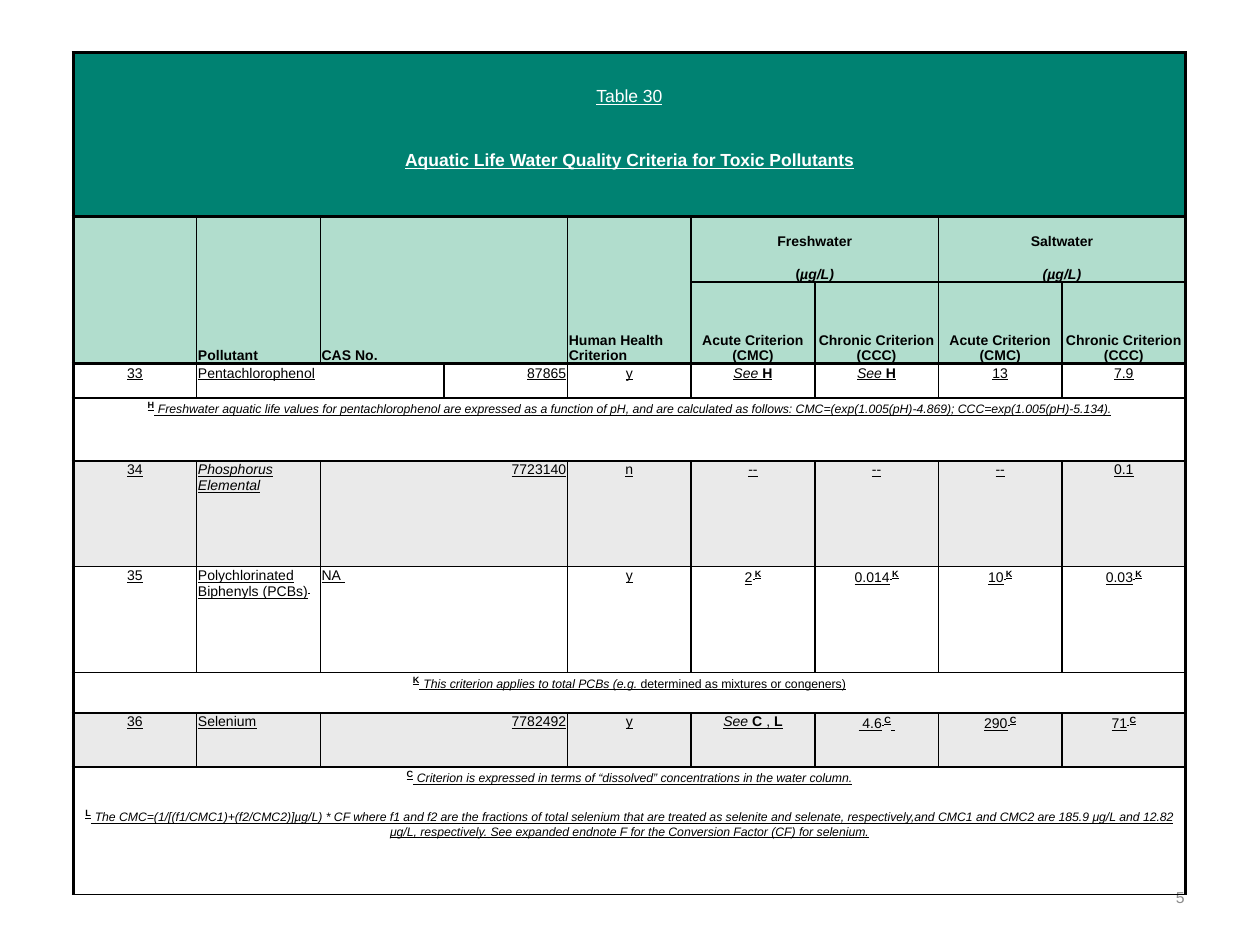
from dataclasses import dataclass

from lxml.etree import SubElement
from pptx import Presentation
from pptx.dml.color import RGBColor
from pptx.enum.text import MSO_ANCHOR, PP_ALIGN
from pptx.oxml.ns import qn
from pptx.util import Inches, Pt


@dataclass(frozen=True)
class Theme:
    font: str = "Arial"
    black: str = "000000"
    white: str = "FFFFFF"
    title_fill: str = "008272"
    header_fill: str = "B1DDCD"
    band_fill: str = "EAEAEA"
    page_number: str = "8C8C8C"
    title_size: float = 10
    body_size: float = 8
    mark_size: float = 9
    note_size: float = 7
    no_grid_style: str = "{2D5ABB26-0587-4C30-8999-92F81FD0307C}"


THEME = Theme()
LEFT, CENTER, RIGHT = PP_ALIGN.LEFT, PP_ALIGN.CENTER, PP_ALIGN.RIGHT

COLUMN_COUNT = 9
ROW_HEIGHTS = [0.26, 0.27, 0.24, 0.27, 0.26, 0.26, 0.26, 0.65,
               0.27, 0.5, 0.84, 0.84, 0.32, 0.43, 0.31, 0.7]
HEADER_ROW, FIRST_DATA_ROW = 5, 8
OPEN_EDGES = {1, 2, 3, 4, 6, 15}
HEAVY_EDGES = {0: 2, HEADER_ROW: 1.5, FIRST_DATA_ROW: 2}


def marked(value, letter, tail=""):
    """Runs for a value followed by a superscript note letter."""
    runs = [(value, ""), (" ", "b^"), (letter, "b^m")]
    return runs + [(tail, "")] if tail else runs


def note(letter, *runs):
    return [(letter, "b^m"), (" ", "is"), *runs]


SEE_H = [("See", "i"), (" H", "b")]
# Row: number, pollutant, CAS number, health criterion, then the four criteria
POLLUTANTS = {
    8: ["33", "Pentachlorophenol", "87865", "y", SEE_H, SEE_H, "13", "7.9"],
    10: ["34", [("Phosphorus Elemental", "i")], "7723140", "n", "--", "--", "--", "0.1"],
    11: ["35", [("Polychlorinated Biphenyls (PCBs)", ""), (" ", "i^")], "NA\u00a0", "y",
         marked("2", "K"), marked("0.014", "K"), marked("10", "K"), marked("0.03", "K")],
    13: ["36", "Selenium", "7782492", "y",
         [("See", "i"), (" ", ""), ("C", "b"), (" , ", ""), ("L", "b")],
         marked(" 4.6", "C", " "), marked("290", "C"), marked("71", "C")],
}
NOTES = {
    9: note("H", ("Freshwater aquatic life values for pentachlorophenol are expressed as a "
                  "function of pH, and are calculated as follows: CMC=(exp(1.005(pH)-4.869); "
                  "CCC=exp(1.005(pH)-5.134).", "i")),
    12: [("K", "b^m"), (" ", "s"), ("This criterion applies to total PCBs (e.g.", "i"),
         (" determined as mixtures or congeners)", "")],
    14: note("C", ("Criterion is expressed in terms of “dissolved” concentrations in the "
                   "water column.", "i")),
    15: note("L", ("The CMC=(1/[(f1/CMC1)+(f2/CMC2)]µg/L) * CF where f1 and f2 are the fractions "
                   "of total selenium that are treated as selenite and selenate, respectively,"
                   "and CMC1 and CMC2 are 185.9 μg/L and 12.82 μg/L, respectively. See expanded "
                   "endnote F for the Conversion Factor (CF) for selenium.", "i")),
}


def rgb(color):
    return RGBColor.from_string(color)


def write(paragraph, content, align, size, color=THEME.black, bold=False, underline=True):
    """Write runs with flags: b bold, i italic, ^ superscript, m mark size, s body size."""
    paragraph.alignment = align
    font = paragraph.font
    font.name, font.size, font.bold, font.underline = THEME.font, Pt(size), bold, underline
    font.color.rgb = rgb(color)
    for text, flags in [(content, "")] if isinstance(content, str) else content:
        run = paragraph.add_run()
        run.text = text
        if "b" in flags:
            run.font.bold = True
        if "i" in flags:
            run.font.italic = True
        if "m" in flags:
            run.font.size = Pt(THEME.mark_size)
        if "s" in flags:
            run.font.size = Pt(THEME.body_size)
        if "^" in flags:
            run._r.get_or_add_rPr().set("baseline", "30000")


def horizontal_edge(index):
    return 0 if index in OPEN_EDGES else HEAVY_EDGES.get(index, 1)


def vertical_edge(index):
    return 2 if index in (0, COLUMN_COUNT) else 1


def set_borders(cell, widths):
    properties = cell._tc.get_or_add_tcPr()
    for side, width in widths.items():
        line = SubElement(properties, qn(f"a:ln{side}"), w=str(Pt(width)))
        if width:
            fill = SubElement(line, qn("a:solidFill"))
            SubElement(fill, qn("a:srgbClr"), val=THEME.black)
        else:
            SubElement(line, qn("a:noFill"))


def fill_block(table, row, column, content="", height=1, width=1, fill=None,
               anchor=MSO_ANCHOR.TOP, align=CENTER, size=THEME.body_size, **style):
    """Merge, border, fill and write one block of cells."""
    bottom, right = row + height, column + width
    if height * width > 1:
        table.cell(row, column).merge(table.cell(bottom - 1, right - 1))
    edges = {"L": vertical_edge(column), "R": vertical_edge(right),
             "T": horizontal_edge(row), "B": horizontal_edge(bottom)}
    for cell in (table.cell(r, c) for r in range(row, bottom) for c in range(column, right)):
        cell.margin_left = cell.margin_right = cell.margin_top = Inches(0.01)
        cell.margin_bottom = 0
        cell.vertical_anchor = anchor
        set_borders(cell, edges)
        if fill:
            cell.fill.solid()
            cell.fill.fore_color.rgb = rgb(fill)
        else:
            cell.fill.background()
        paragraph = cell.text_frame.paragraphs[0]
        if content and not cell.is_spanned:
            write(paragraph, content, align, size, **style)
        else:
            SubElement(paragraph._p, qn("a:endParaRPr"), sz=str(Pt(size).centipoints))


def add_title_rows(table):
    titles = {1: "Table 30", 3: "Aquatic Life Water Quality Criteria for Toxic Pollutants"}
    for row in range(HEADER_ROW):
        fill_block(table, row, 0, titles.get(row, ""), width=COLUMN_COUNT, fill=THEME.title_fill,
                   size=THEME.title_size, color=THEME.white, bold=row == 3)


def add_header_rows(table):
    style = dict(fill=THEME.header_fill, anchor=MSO_ANCHOR.BOTTOM, bold=True, underline=False)
    for column, width, label in [(0, 1, ""), (1, 1, "Pollutant"), (2, 2, "CAS No."),
                                 (4, 1, "Human Health Criterion")]:
        fill_block(table, HEADER_ROW, column, label, height=3, width=width, align=LEFT, **style)
    waters = [(5, "Freshwater", [("(", ""), ("µg/L)", "i")]),
              (7, "Saltwater", [("(µg/L)", "i")])]
    for column, water, unit in waters:
        fill_block(table, HEADER_ROW, column, water, width=2, **style)
        fill_block(table, HEADER_ROW + 1, column, unit, width=2, **style)
        for offset, label in enumerate(["Acute Criterion (CMC)", "Chronic Criterion (CCC)"]):
            fill_block(table, HEADER_ROW + 2, column + offset, label, **style)


def add_pollutant_rows(table):
    for row, (number, name, cas, *criteria) in POLLUTANTS.items():
        fill = THEME.band_fill if row in (10, 13) else None
        name_width = 2 if row == FIRST_DATA_ROW else 1
        fill_block(table, row, 0, number, fill=fill)
        fill_block(table, row, 1, name, width=name_width, fill=fill, align=LEFT)
        fill_block(table, row, 1 + name_width, cas, width=3 - name_width, fill=fill,
                   align=RIGHT if cas.isdigit() else LEFT)
        for column, value in enumerate(criteria, start=4):
            fill_block(table, row, column, value, fill=fill)
    for row, runs in NOTES.items():
        fill_block(table, row, 0, runs, width=COLUMN_COUNT, size=THEME.note_size)


def add_criteria_table(slide, left, top, width):
    frame = slide.shapes.add_table(len(ROW_HEIGHTS), COLUMN_COUNT, left, top, width,
                                   Inches(sum(ROW_HEIGHTS)))
    table = frame.table
    table.first_row = table.horz_banding = False
    table._tbl.tblPr.find(qn("a:tableStyleId")).text = THEME.no_grid_style
    for row, height in zip(table.rows, ROW_HEIGHTS):
        row.height = Inches(height)
    add_title_rows(table)
    add_header_rows(table)
    add_pollutant_rows(table)


def add_page_number(slide, left, top, width, height):
    frame = slide.shapes.add_textbox(left, top, width, height).text_frame
    frame.word_wrap = True
    frame.vertical_anchor = MSO_ANCHOR.MIDDLE
    write(frame.paragraphs[0], "5", RIGHT, 9, color=THEME.page_number, underline=False)


def main():
    presentation = Presentation()
    presentation.slide_width, presentation.slide_height = Inches(10), Inches(7.5)
    slide = presentation.slides.add_slide(presentation.slide_layouts[6])
    add_page_number(slide, Inches(7.17), Inches(6.92), Inches(2.33), Inches(0.4))
    add_criteria_table(slide, Inches(0.58), Inches(0.42), Inches(8.83))
    presentation.save("out.pptx")


if __name__ == "__main__":
    main()
